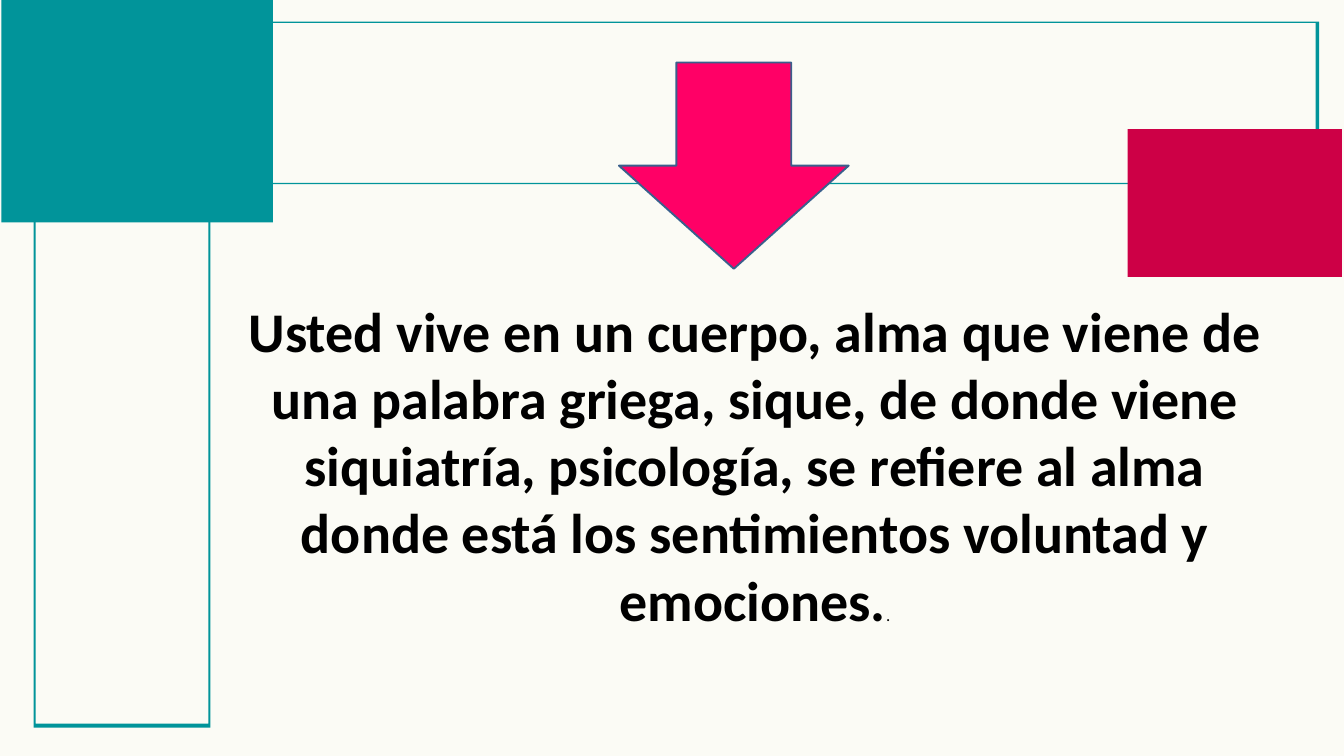
"""Build the slide on body and soul with frames, blocks and an arrow."""
from dataclasses import dataclass
from typing import Optional

from pptx import Presentation
from pptx.dml.color import RGBColor
from pptx.enum.shapes import MSO_SHAPE
from pptx.enum.text import PP_ALIGN
from pptx.shapes.autoshape import Shape
from pptx.slide import Slide
from pptx.text.text import _Paragraph as Para
from pptx.util import Emu, Pt

SCALE = 9144


@dataclass(frozen=True)
class Theme:
    paper: str = "FBFBF5"
    teal: str = "01949A"
    red: str = "CD0046"
    pink: str = "FF0066"
    edge: str = "3A5F8C"
    ink: str = "000000"
    font: str = "Calibri"
    large: int = 60
    small: int = 18
    line: int = 2


@dataclass(frozen=True)
class Box:
    left: int
    top: int
    width: int
    height: int

    def place(self) -> tuple[Emu, Emu, Emu, Emu]:
        return px(self.left), px(self.top), px(self.width), px(self.height)

    def inset(self, side: int, cap: int) -> "Box":
        return Box(self.left + side, self.top + cap,
                   self.width - 2 * side, self.height - 2 * cap)

    def points(self) -> list[tuple[int, int]]:
        right, base = self.left + self.width, self.top + self.height
        return [(self.left, self.top), (right, self.top),
                (right, base), (self.left, base)]


@dataclass(frozen=True)
class Frame:
    box: Box
    side: int
    cap: int


@dataclass(frozen=True)
class Block:
    kind: MSO_SHAPE
    box: Box
    fill: str
    line: Optional[str] = None


THEME = Theme()
FRAMES = [
    Frame(Box(81, 32, 1882, 242), side=5, cap=2),
    Frame(Box(50, 93, 263, 990), side=3, cap=6),
]
BLOCKS = [
    Block(MSO_SHAPE.RECTANGLE, Box(1678, 192, 319, 220), THEME.red),
    Block(MSO_SHAPE.RECTANGLE, Box(2, -3, 404, 334), THEME.teal),
]
ARROW = Block(MSO_SHAPE.DOWN_ARROW, Box(921, 93, 342, 307), THEME.pink, THEME.edge)
BODY = Box(342, 436, 1563, 545)
QUOTE = ("Usted vive en un cuerpo, alma que viene de una palabra griega, sique, "
         "de donde viene siquiatría, psicología, se refiere al alma donde está "
         "los sentimientos voluntad y emociones.")


def px(count: int) -> Emu:
    return Emu(count * SCALE)


def tint(code: str) -> RGBColor:
    return RGBColor.from_string(code)


def paint(shape: Shape, fill: str, line: Optional[str] = None) -> None:
    shape.shadow.inherit = False
    shape.fill.solid()
    shape.fill.fore_color.rgb = tint(fill)
    if line:
        shape.line.color.rgb = tint(line)
        shape.line.width = Pt(THEME.line)
    else:
        shape.line.fill.background()


def draw_frame(slide: Slide, frame: Frame) -> None:
    outer = frame.box.points()
    inner = frame.box.inset(frame.side, frame.cap).points()[::-1]
    pen = slide.shapes.build_freeform(*outer[0], scale=SCALE)
    pen.add_line_segments(outer[1:], close=True)
    pen.move_to(*inner[0])
    pen.add_line_segments(inner[1:], close=True)
    paint(pen.convert_to_shape(), THEME.teal)


def draw_block(slide: Slide, block: Block) -> None:
    shape = slide.shapes.add_shape(block.kind, *block.box.place())
    paint(shape, block.fill, block.line)


def write(para: Para, text: str, *, size: int, bold: bool = False) -> None:
    run = para.add_run()
    run.text = text
    run.font.name = THEME.font
    run.font.size = Pt(size)
    run.font.bold = bold
    run.font.color.rgb = tint(THEME.ink)


def draw_body(slide: Slide) -> None:
    frame = slide.shapes.add_textbox(*BODY.place()).text_frame
    frame.word_wrap = True
    para = frame.paragraphs[0]
    para.alignment = PP_ALIGN.CENTER
    write(para, QUOTE, size=THEME.large, bold=True)
    write(para, ".", size=THEME.small)


def main() -> None:
    deck = Presentation()
    deck.slide_width, deck.slide_height = px(2000), px(1125)
    slide = deck.slides.add_slide(deck.slide_layouts[6])
    slide.background.fill.solid()
    slide.background.fill.fore_color.rgb = tint(THEME.paper)
    for frame in FRAMES:
        draw_frame(slide, frame)
    for block in BLOCKS:
        draw_block(slide, block)
    draw_body(slide)
    draw_block(slide, ARROW)
    deck.save("out.pptx")


if __name__ == "__main__":
    main()
